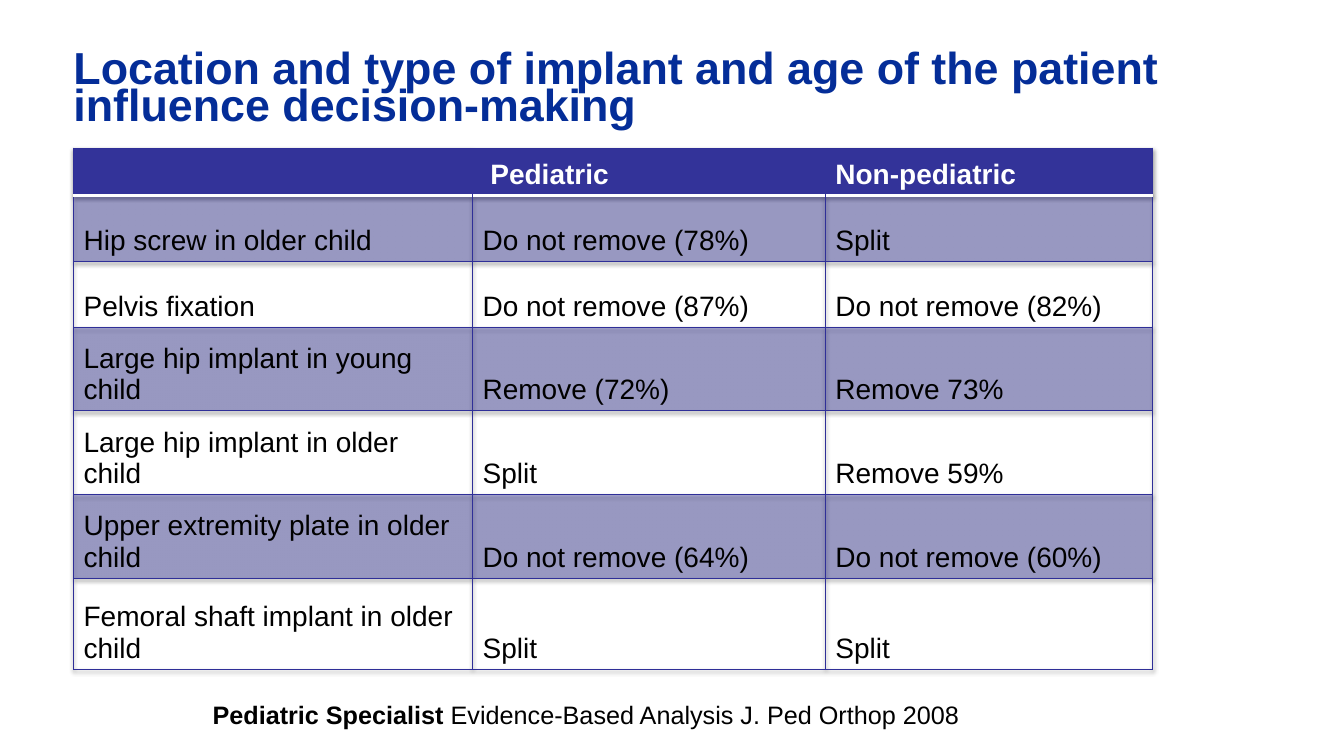
from pptx import Presentation
from pptx.dml.color import RGBColor
from pptx.enum.text import MSO_ANCHOR, PP_ALIGN
from pptx.oxml import parse_xml
from pptx.oxml.ns import nsdecls, qn
from pptx.util import Pt

TITLE = "Location and type of implant and age of the patient influence decision-making"
SOURCE = [("Pediatric Specialist ", True),
          ("Evidence-Based Analysis J. Ped Orthop 2008", False)]
ROWS = [
    ("", " Pediatric", "Non-pediatric"),
    ("Hip screw in older child", "Do not remove (78%)", "Split"),
    ("Pelvis fixation", "Do not remove (87%)", "Do not remove (82%)"),
    ("Large hip implant in young child", "Remove (72%)", "Remove 73%"),
    ("Large hip implant in older child", "Split", "Remove 59%"),
    ("Upper extremity plate in older child", "Do not remove (64%)", "Do not remove (60%)"),
    ("Femoral shaft implant in older child", "Split", "Split"),
]
WIDTHS = [285, 252, 234]
HEIGHTS = [34, 47, 47, 59.75, 59.75, 59.75, 65]
COLORS = {"title": "042D98", "head": "333399", "line": "2F2F98",
          "black": "000000", "white": "FFFFFF"}
LEFT, TOP = 52.5, 105.75
PLAIN_STYLE = "{2D5ABB26-0587-4C30-8999-92F81FD0307C}"
SHADOW = f"""<a:effectLst {nsdecls('a')}>
  <a:outerShdw blurRad="40000" dist="23000" dir="5400000" rotWithShape="0">
    <a:srgbClr val="{COLORS['black']}"><a:alpha val="35000"/></a:srgbClr>
  </a:outerShdw></a:effectLst>"""


def write(frame, runs, size, color="black", align=PP_ALIGN.LEFT, spacing=None):
    """Fill the first paragraph with (text, bold) runs."""
    frame.word_wrap = True
    para = frame.paragraphs[0]
    para.alignment = align
    if spacing:
        para.line_spacing = Pt(spacing)
    for text, bold in runs:
        run = para.add_run()
        run.text = text
        font = run.font
        font.name, font.size, font.bold = "Arial", Pt(size), bold
        font.color.rgb = RGBColor.from_string(COLORS[color])


def add_box(slide, left, top, width, height):
    return slide.shapes.add_textbox(Pt(left), Pt(top), Pt(width), Pt(height)).text_frame


def add_edge(cell, side, color, width):
    """Draw one cell border; no colour means no line."""
    paint = (f'<a:solidFill><a:srgbClr val="{COLORS[color]}"/></a:solidFill>'
             if color else "<a:noFill/>")
    cell._tc.get_or_add_tcPr().append(parse_xml(
        f'<a:ln{side} {nsdecls("a")} w="{Pt(width)}">{paint}</a:ln{side}>'))


def paint_cell(cell, row, col):
    head = row == 0
    edges = {
        "L": None if head and col > 0 else "line",
        "R": None if head and col < len(WIDTHS) - 1 else "line",
        "T": "white" if row == 1 else "line",
        "B": "white" if head else "line",
    }
    for side, color in edges.items():
        add_edge(cell, side, color, 2 if color == "white" else 0.75)
    if head or row % 2:
        cell.fill.solid()
        cell.fill.fore_color.rgb = RGBColor.from_string(COLORS["head"])
        if not head:
            shade = cell._tc.tcPr.find(qn("a:solidFill")).find(qn("a:srgbClr"))
            shade.append(parse_xml(f'<a:alpha {nsdecls("a")} val="40000"/>'))
    else:
        cell.fill.background()


def add_grid(slide):
    table = slide.shapes.add_table(len(ROWS), len(WIDTHS), Pt(LEFT), Pt(TOP),
                                   Pt(sum(WIDTHS)), Pt(sum(HEIGHTS))).table
    props = table._tbl.tblPr
    props.find(qn("a:tableStyleId")).text = PLAIN_STYLE
    props.insert(0, parse_xml(SHADOW))
    for column, width in zip(table.columns, WIDTHS):
        column.width = Pt(width)
    for r, (texts, height) in enumerate(zip(ROWS, HEIGHTS)):
        table.rows[r].height = Pt(height)
        for c, text in enumerate(texts):
            cell = table.cell(r, c)
            cell.vertical_anchor = MSO_ANCHOR.BOTTOM
            if text:
                write(cell.text_frame, [(text, r == 0)], 20,
                      color="black" if r else "white")
            paint_cell(cell, r, c)


def main():
    deck = Presentation()
    deck.slide_width, deck.slide_height = Pt(960), Pt(540)
    slide = deck.slides.add_slide(deck.slide_layouts[6])

    source = add_box(slide, 139.5, 496, 558, 29)
    write(source, SOURCE, 18, align=PP_ALIGN.CENTER)

    title = add_box(slide, LEFT, 41, 854.5, 76)
    title.margin_left = title.margin_right = title.margin_top = title.margin_bottom = 0
    write(title, [(TITLE, True)], 32, color="title", spacing=26)

    add_grid(slide)
    deck.save("out.pptx")


if __name__ == "__main__":
    main()
